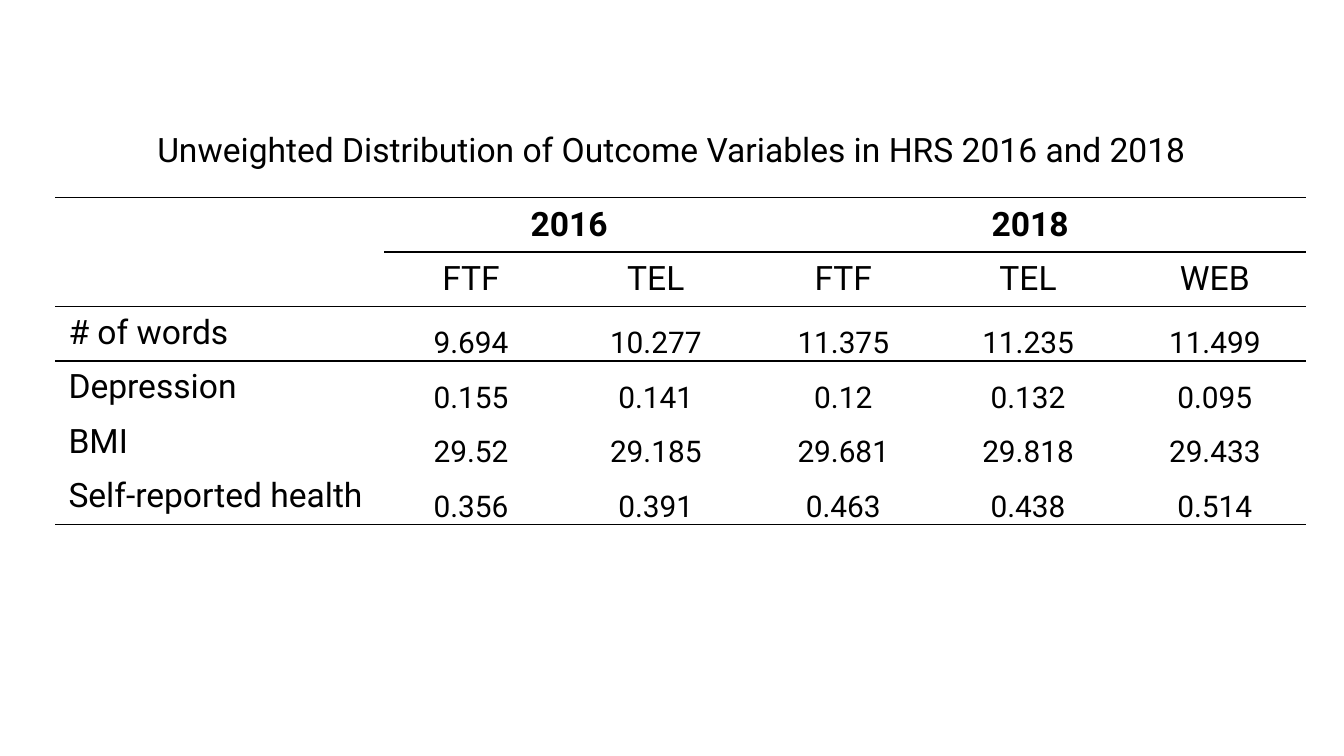
from pptx import Presentation
from pptx.dml.color import RGBColor
from pptx.enum.text import MSO_ANCHOR as Anchor, MSO_AUTO_SIZE as Fit, PP_ALIGN as Align
from pptx.oxml import parse_xml
from pptx.oxml.ns import nsdecls
from pptx.util import Inches, Pt

BLACK = RGBColor(0, 0, 0)
FONT = "Roboto"
NO_STYLE = "{2D5ABB26-0587-4C30-8999-92F81FD0307C}"

WIDTHS = [2.45, 1.29, 1.46, 1.33, 1.42, 1.36]
ROW_H = Pt(29.2)
ROWS = [
    ["", "2016", "", "2018", "", ""],
    ["", "FTF", "TEL", "FTF", "TEL", "WEB"],
    ["# of words", "9.694", "10.277", "11.375", "11.235", "11.499"],
    ["Depression", "0.155", "0.141", "0.12", "0.132", "0.095"],
    ["BMI", "29.52", "29.185", "29.681", "29.818", "29.433"],
    ["Self-reported health", "0.356", "0.391", "0.463", "0.438", "0.514"],
]
HEADS = 2
# Top left and bottom right cell of each merged block
SPANS = [((0, 0), (1, 0)), ((0, 1), (0, 2)), ((0, 3), (0, 5))]
# Row edge -> first column that its rule covers
RULES = {0: 0, 1: 1, 2: 0, 6: 0}


def style_text(frame, size, bold=False, align=Align.LEFT):
    for para in frame.paragraphs:
        para.alignment = align
        for run in para.runs:
            font = run.font
            font.name, font.size, font.bold = FONT, Pt(size), bold
            font.color.rgb = BLACK


def add_title(slide, text):
    title = slide.shapes.title
    title.left, title.top = Inches(1.07), Inches(0.91)
    title.width, title.height = Inches(8.43), Inches(0.4)
    frame = title.text_frame
    frame.text = text
    frame.word_wrap = True
    frame.auto_size = Fit.NONE
    frame.vertical_anchor = Anchor.TOP
    style_text(frame, 18)


def fill_cell(cell, text, row, col):
    cell.fill.background()
    cell.text_frame.text = text
    number = row >= HEADS and col > 0
    if number:
        cell.vertical_anchor = Anchor.BOTTOM
        cell.margin_left = cell.margin_right = cell.margin_top = Inches(0.01)
        cell.margin_bottom = 0
    elif row < HEADS:
        cell.vertical_anchor = Anchor.MIDDLE
    style_text(cell.text_frame, 16 if number else 18, row == 0,
               Align.CENTER if col else Align.LEFT)


def add_border(cell, tag):
    line = parse_xml(
        f'<a:{tag} {nsdecls("a")} w="{Pt(1)}"><a:solidFill>'
        f'<a:srgbClr val="{BLACK}"/></a:solidFill></a:{tag}>')
    cell._tc.get_or_add_tcPr().insert(0, line)


def rule_table(table):
    # Bottom edges come first, so that each top border lands before them
    for edge, first in sorted(RULES.items(), reverse=True):
        for col in range(first, len(WIDTHS)):
            if edge > 0:
                add_border(table.cell(edge - 1, col), "lnB")
            if edge < len(ROWS):
                add_border(table.cell(edge, col), "lnT")


def add_grid(slide):
    frame = slide.shapes.add_table(
        len(ROWS), len(WIDTHS), Inches(0.41), Inches(1.47),
        Inches(sum(WIDTHS)), ROW_H * len(ROWS))
    table = frame.table
    table.first_row = table.horz_banding = False
    table._tbl.tblPr[0].text = NO_STYLE
    for column, width in zip(table.columns, WIDTHS):
        column.width = Inches(width)
    for r, values in enumerate(ROWS):
        for c, value in enumerate(values):
            fill_cell(table.cell(r, c), value, r, c)
    for start, end in SPANS:
        table.cell(*start).merge(table.cell(*end))
    rule_table(table)


def main():
    deck = Presentation()
    # Widescreen, 16 by 9
    deck.slide_width = Inches(10)
    deck.slide_height = deck.slide_width * 9 // 16
    slide = deck.slides.add_slide(deck.slide_layouts[5])
    add_grid(slide)
    add_title(slide, "Unweighted Distribution of Outcome Variables in HRS 2016 and 2018")
    deck.save("out.pptx")


if __name__ == "__main__":
    main()
